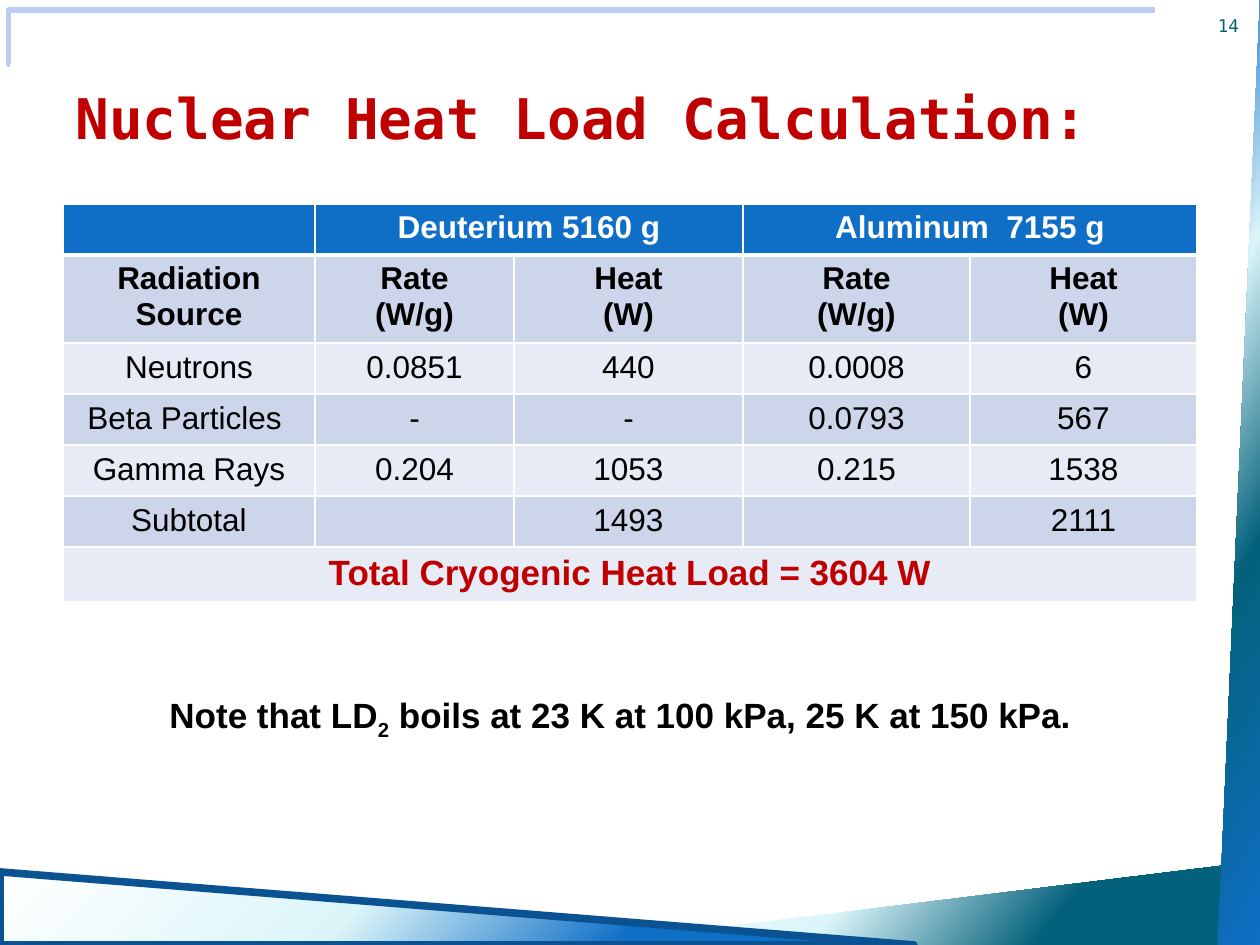
"""Build the nuclear heat load slide."""
from lxml import etree
from pptx import Presentation
from pptx.dml.color import RGBColor
from pptx.enum.shapes import MSO_CONNECTOR, MSO_SHAPE
from pptx.enum.text import MSO_ANCHOR, PP_ALIGN
from pptx.oxml.ns import qn
from pptx.util import Emu, Pt

TRIANGLE = MSO_SHAPE.RIGHT_TRIANGLE
ELBOW = MSO_CONNECTOR.ELBOW
LEFT, CENTER = PP_ALIGN.LEFT, PP_ALIGN.CENTER
TOP, MIDDLE, BOTTOM = MSO_ANCHOR.TOP, MSO_ANCHOR.MIDDLE, MSO_ANCHOR.BOTTOM
SCALE = 914400 / 126
SANS, MONO = "Arial", "DejaVu Sans Mono"
COLORS = {
    "white": "FFFFFF", "black": "000000", "red": "C00000", "blue": "0F6FC6",
    "navy": "0B5292", "teal": "04617B", "ice": "DBF5F9", "frame": "BBCBF2",
    "band": "CCD5EA", "pale": "E7EBF5",
}
STOPS = (0, 40, 70, 100)
COL_WIDTHS = (252, 199, 229, 227, 227)
ROW_HEIGHT = 51
ROWS = [
    ["", "Deuterium 5160 g", "", "Aluminum  7155 g", ""],
    ["Radiation Source"] + ["Rate\n(W/g)", "Heat\n(W)"] * 2,
    ["Neutrons", "0.0851", "440", "0.0008", "6"],
    ["Beta Particles ", "-", "-", "0.0793", "567"],
    ["Gamma Rays", "0.204", "1053", "0.215", "1538"],
    ["Subtotal", "", "1493", "", "2111"],
    ["Total Cryogenic Heat Load = 3604 W", "", "", "", ""],
]
MERGES = [(0, 1, 2), (0, 3, 4), (6, 0, 4)]


def px(n):
    return Emu(round(n * SCALE))


def rgb(name):
    return RGBColor.from_string(COLORS[name])


def add_run(p, text, size, color, font=SANS, bold=False):
    r = p.add_run()
    r.text = text
    r.font.size = Pt(size)
    r.font.name = font
    r.font.bold = bold
    r.font.color.rgb = rgb(color)
    return r


def add_text(slide, box, anchor=TOP, align=LEFT):
    tf = slide.shapes.add_textbox(*map(px, box)).text_frame
    tf.word_wrap = True
    tf.vertical_anchor = anchor
    p = tf.paragraphs[0]
    p.alignment = align
    return p


def add_wedge(slide, box, colors, angle, flip=False, line=None):
    s = slide.shapes.add_shape(TRIANGLE, *map(px, box))
    s.shadow.inherit = False
    s.fill.gradient()
    s.fill.gradient_angle = 360 - angle
    stops = s.element.spPr.find(qn("a:gradFill")).find(qn("a:gsLst"))
    stops.clear()
    for pos, color in zip(STOPS, colors):
        gs = etree.SubElement(stops, qn("a:gs"), pos=str(pos * 1000))
        etree.SubElement(gs, qn("a:srgbClr"), val=COLORS[color])
    if flip:
        s.element.spPr.find(qn("a:xfrm")).set("flipH", "1")
    if line:
        s.line.color.rgb = rgb("navy")
        s.line.width = Pt(line)
    else:
        s.line.fill.background()


def add_frame(slide):
    s = slide.shapes.add_connector(ELBOW, px(1155), px(10), px(10), px(64))
    s.line.color.rgb = rgb("frame")
    s.line.width = Pt(3)
    spPr = s.element.spPr
    guides = spPr.find(qn("a:prstGeom")).find(qn("a:avLst"))
    etree.SubElement(guides, qn("a:gd"), name="adj1", fmla="val 100100")
    etree.SubElement(spPr, qn("a:effectLst"))


def set_borders(cell, top, bottom):
    tcPr = cell._tc.get_or_add_tcPr()
    for side, width in (("L", 1), ("R", 1), ("T", top), ("B", bottom)):
        ln = etree.SubElement(tcPr, qn(f"a:ln{side}"), w=str(Pt(width)))
        fill = etree.SubElement(ln, qn("a:solidFill"))
        etree.SubElement(fill, qn("a:srgbClr"), val=COLORS["white"])


def row_style(row):
    """Return fill, text colour, text size and bold for a table row."""
    if row == 0:
        return "blue", "white", 18, True
    fill = "band" if row % 2 else "pale"
    if row == len(ROWS) - 1:
        return fill, "red", 20, True
    return fill, "black", 18, row == 1


def fill_cell(cell, row, text):
    fill, color, size, bold = row_style(row)
    set_borders(cell, 3 if row == 1 else 1, 3 if row == 0 else 1)
    cell.fill.solid()
    cell.fill.fore_color.rgb = rgb(fill)
    if not text:
        return
    tf = cell.text_frame
    for i, line in enumerate(text.split("\n")):
        p = tf.add_paragraph() if i else tf.paragraphs[0]
        p.alignment = CENTER
        add_run(p, line, size, color, bold=bold)


def add_heat_table(slide):
    box = (63, 204, sum(COL_WIDTHS), ROW_HEIGHT * len(ROWS))
    table = slide.shapes.add_table(len(ROWS), len(COL_WIDTHS), *map(px, box)).table
    for col, width in zip(table.columns, COL_WIDTHS):
        col.width = px(width)
    for row in table.rows:
        row.height = px(ROW_HEIGHT)
    for row, first, last in MERGES:
        table.cell(row, first).merge(table.cell(row, last))
    for i, texts in enumerate(ROWS):
        for j, text in enumerate(texts):
            fill_cell(table.cell(i, j), i, text)


def main():
    prs = Presentation()
    prs.slide_width, prs.slide_height = px(1260), px(945)
    slide = prs.slides.add_slide(prs.slide_layouts[6])

    add_wedge(slide, (577, 861, 683, 84), ("white", "ice", "teal", "teal"), 140, flip=True)
    add_wedge(slide, (1218, 0, 42, 945), ("blue", "teal", "ice", "blue"), 330, flip=True)
    add_wedge(slide, (0, 872, 914, 73), ("white", "ice", "blue", "blue"), 45, line=4.33)
    add_frame(slide)

    title = add_text(slide, (63, 38, 1134, 158), MIDDLE)
    add_run(title, "Nuclear Heat Load Calculation:", 32, "red", MONO, True)
    number = add_text(slide, (1197, 10, 63, 32), BOTTOM, CENTER)
    add_run(number, "14", 10, "teal", MONO)

    add_heat_table(slide)

    note = add_text(slide, (157, 687, 966, 55))
    add_run(note, "Note that LD", 20, "black", bold=True)
    sub = add_run(note, "2", 20, "black", bold=True)
    sub.font._element.set("baseline", "-25000")
    add_run(note, " boils at 23 K at 100 kPa, 25 K at 150 kPa.", 20, "black", bold=True)
    prs.save("out.pptx")


if __name__ == "__main__":
    main()
